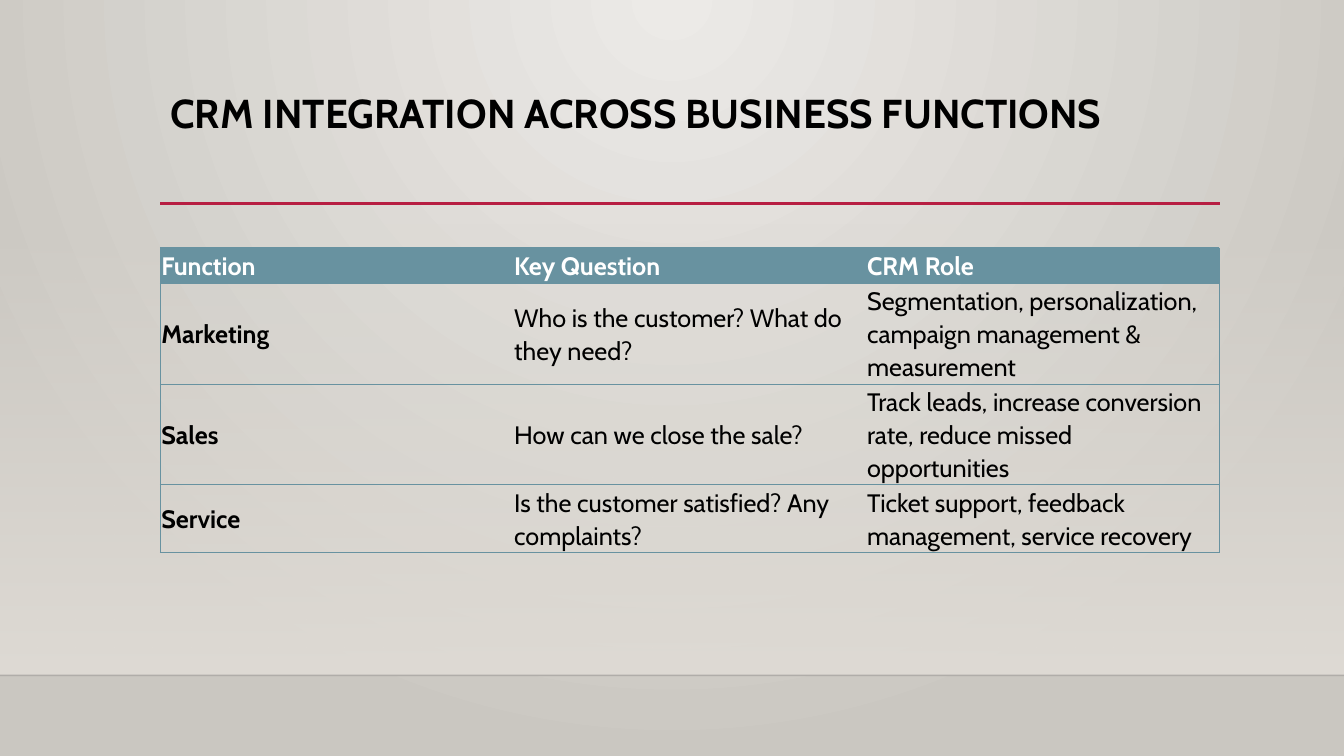
import pptx
import pptx.dml.color
import pptx.enum.shapes
import pptx.enum.text
import pptx.oxml
import pptx.util
import pptx.oxml.ns

Inch = pptx.util.Inches
Pt = pptx.util.Pt
qn = pptx.oxml.ns.qn
WIDE, HIGH = 13.33, 7.5
LEFT, SPAN = 1.59, 10.5
FLOOR = 6.7
TEAL = "6892A0"
HEADS = [0.35, 1, 1, 0.67]
ROWS = [
    ["Function", "Key Question", "CRM Role"],
    ["Marketing", "Who is the customer? What do they need?",
     "Segmentation, personalization, campaign management & measurement"],
    ["Sales", "How can we close the sale?",
     "Track leads, increase conversion rate, reduce missed opportunities"],
    ["Service", "Is the customer satisfied? Any complaints?",
     "Ticket support, feedback management, service recovery"],
]


def color(text):
    return pptx.dml.color.RGBColor.from_string(text)


def node(xml):
    """Parse one element that uses the a: prefix."""
    return pptx.oxml.parse_xml(
        xml.replace(" ", " " + pptx.oxml.ns.nsdecls("a") + " ", 1))


deck = pptx.Presentation()
deck.slide_width, deck.slide_height = Inch(WIDE), Inch(HIGH)
slide = deck.slides.add_slide(deck.slide_layouts[5])

# Background: a glow from the top centre, and a wall that fades in to the floor
wall = slide.shapes.add_shape(pptx.enum.shapes.MSO_SHAPE.RECTANGLE,
                              0, Inch(2.21), Inch(WIDE), Inch(FLOOR - 2.21))
wall.shadow.inherit = False
wall.line.fill.background()
back = slide.background.fill
for fill, tones in [(back, ["ECEAE7", "CAC7C1"]),
                    (wall.fill, ["DFDBD5", "DFDBD5"])]:
    fill.gradient()
    for stop, tone, place in zip(fill.gradient_stops, tones, [0, 1]):
        stop.color.rgb = color(tone)
        stop.position = place
wall.fill.gradient_angle = 270
clear = wall._element.spPr.findall(".//" + qn("a:srgbClr"))[0]
clear.append(node('<a:alpha val="0"/>'))

glow = slide._element.find(".//" + qn("p:bgPr") + "/" + qn("a:gradFill"))
lin = glow.find(qn("a:lin"))
glow.replace(lin, node(
    '<a:path path="circle"><a:fillToRect l="43000" r="43000" b="100000"/>'
    '</a:path>'))

# Floor edge and title rule
for x, end, y, tone, size, alpha in [(0, WIDE, FLOOR, "000001", 1, 20),
                                     (LEFT, 12.1, 2.02, "B71E42", 2.5, 100)]:
    rule = slide.shapes.add_connector(
        pptx.enum.shapes.MSO_CONNECTOR.STRAIGHT,
        Inch(x), Inch(y), Inch(end), Inch(y))
    rule.line.color.rgb = color(tone)
    rule.line.width = Pt(size)
    shade = rule._element.spPr.find(".//" + qn("a:srgbClr"))
    shade.append(node(f'<a:alpha val="{alpha * 1000}"/>'))
    rule._element.spPr.append(node('<a:effectLst />'))

title = slide.shapes.title
title.left, title.top = Inch(LEFT), Inch(0.88)
title.width, title.height = Inch(SPAN), Inch(1.15)
frame = title.text_frame
frame.text = "CRM INTEGRATION ACROSS BUSINESS FUNCTIONS"
frame.word_wrap = True
frame.vertical_anchor = pptx.enum.text.MSO_ANCHOR.TOP
line = frame.paragraphs[0]
line.alignment = pptx.enum.text.PP_ALIGN.LEFT
line.line_spacing = 0.9
font = line.runs[0].font
font.name, font.size, font.bold = "Cabin", Pt(28.8), True
font.color.rgb = color("000000")

# Table: teal header, teal frame and a line under each row
table = slide.shapes.add_table(len(ROWS), 3, Inch(LEFT), Inch(2.46),
                               Inch(SPAN), Inch(sum(HEADS))).table
table.horz_banding = False
for col in table.columns:
    col.width = Inch(SPAN / 3)
for r, texts in enumerate(ROWS):
    table.rows[r].height = Inch(HEADS[r])
    for c, text in enumerate(texts):
        cell = table.cell(r, c)
        cell.text = text
        cell.vertical_anchor = pptx.enum.text.MSO_ANCHOR.MIDDLE
        cell.margin_left = cell.margin_right = Inch(0.01)
        cell.margin_top = cell.margin_bottom = Inch(0.01)
        line = cell.text_frame.paragraphs[0]
        line.line_spacing = 1.07
        line.space_after = Pt(8)
        font = line.runs[0].font
        font.name, font.size = "Cabin", Pt(18)
        font.bold = r == 0 or c == 0
        font.color.rgb = color("FFFFFF" if r == 0 else "000000")
        if r == 0:
            cell.fill.solid()
            cell.fill.fore_color.rgb = color(TEAL)
        else:
            cell.fill.background()
        sides = {"L": c == 0, "R": c == 2, "T": True, "B": True}
        for i, (side, shown) in enumerate(sides.items()):
            paint = (f'<a:solidFill><a:srgbClr val="{TEAL}"/></a:solidFill>'
                     if shown else '<a:noFill/>')
            cell._tc.tcPr.insert(i, node(
                f'<a:ln{side} w="{Pt(0.75)}">{paint}</a:ln{side}>'))

deck.save("out.pptx")
